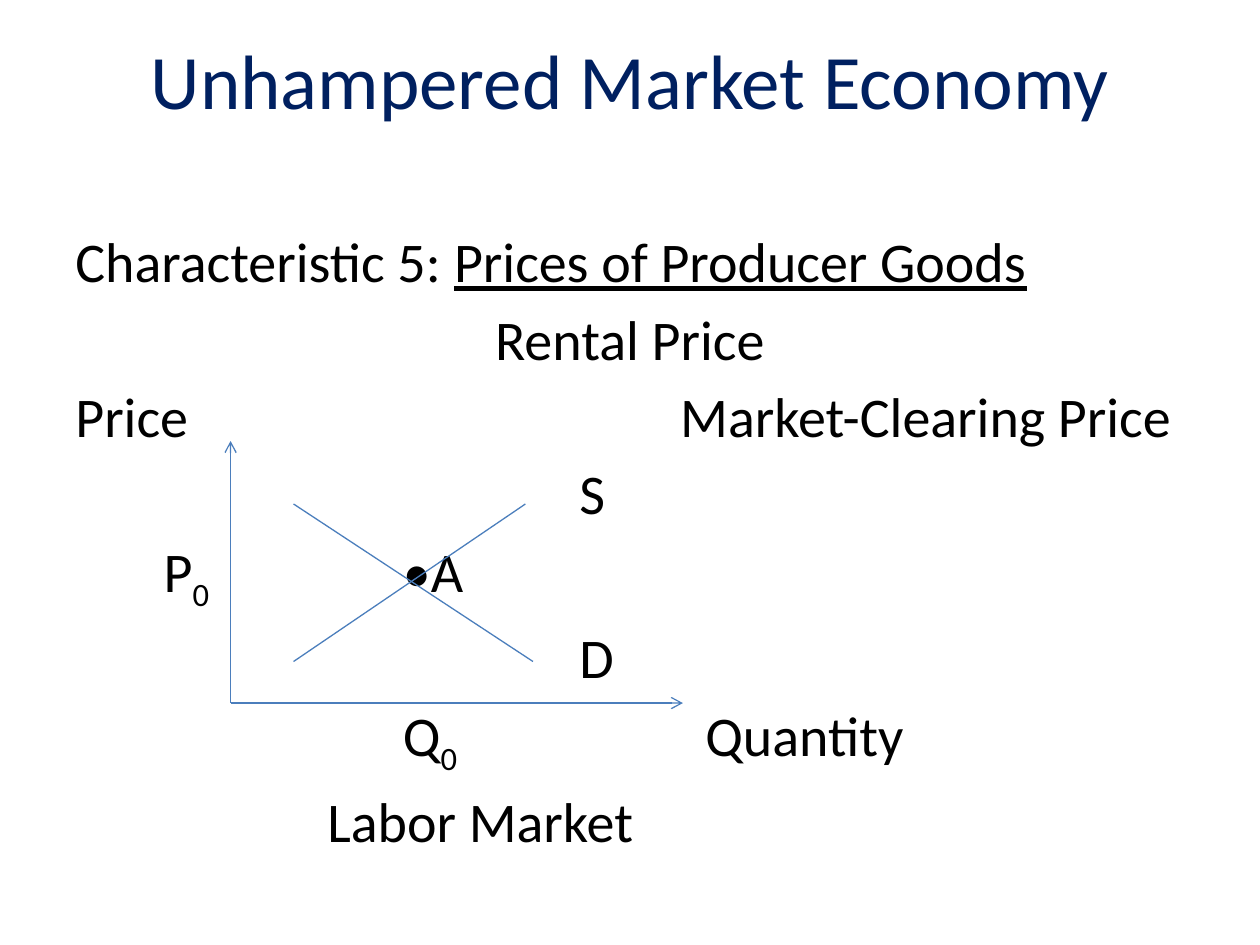
from pptx import Presentation
from pptx.dml.color import RGBColor
from pptx.enum.shapes import MSO_CONNECTOR
from pptx.enum.text import MSO_ANCHOR, PP_ALIGN
from pptx.oxml.ns import qn
from pptx.util import Inches, Pt
from lxml.etree import SubElement

NAVY = RGBColor(0x00, 0x20, 0x60)
BLACK = RGBColor(0x00, 0x00, 0x00)
BLUE = RGBColor(0x4B, 0x7E, 0xBC)
FONT = "Calibri"

TITLE = "Unhampered Market Economy"

# Each row: alignment, tab stops in inches, runs of (text, style)
ROWS = [
    (PP_ALIGN.LEFT, [], [("Characteristic 5: ", ""), ("Prices of Producer Goods", "underline")]),
    (PP_ALIGN.CENTER, [], [("Rental Price", "")]),
    (PP_ALIGN.LEFT, [4.8], [("Price\tMarket-Clearing Price", "")]),
    (PP_ALIGN.LEFT, [4], [("\tS", "")]),
    (PP_ALIGN.LEFT, [0.7, 2.6], [("\tP", ""), ("0", "sub"), ("\t•A", "")]),
    (PP_ALIGN.LEFT, [4], [("\tD", "")]),
    (PP_ALIGN.LEFT, [2.6, 5], [("\tQ", ""), ("0", "sub"), ("\tQuantity", "")]),
    (PP_ALIGN.LEFT, [2], [("\tLabor Market", "")]),
]

ORIGIN = (1.83, 5.58)
# Each line: start, end, has arrowhead
LINES = [
    (ORIGIN, (5.42, ORIGIN[1]), True),      # quantity axis
    (ORIGIN, (ORIGIN[0], 3.5), True),       # price axis
    ((2.33, 4), (4.23, 5.25), False),       # demand
    ((2.33, 5.25), (4.17, 4), False),       # supply
]


def add_run(p, text, size, color, style=""):
    r = p.add_run()
    r.text = text
    r.font.name = FONT
    r.font.size = Pt(size)
    r.font.color.rgb = color
    if style == "underline":
        r.font.underline = True
    elif style == "sub":
        r.font._element.set("baseline", "-25000")


def set_tabs(p, stops):
    tabs = SubElement(p._p.get_or_add_pPr(), qn("a:tabLst"))
    for stop in stops:
        SubElement(tabs, qn("a:tab"), pos=str(Inches(stop)), algn="l")


def add_line(s, start, end, arrow):
    x1, y1, x2, y2 = map(Inches, start + end)
    line = s.shapes.add_connector(MSO_CONNECTOR.STRAIGHT, x1, y1, x2, y2)
    line.line.color.rgb = BLUE
    line.line.width = Pt(0.75)
    if arrow:
        SubElement(line.line._get_or_add_ln(), qn("a:tailEnd"), type="arrow")
    SubElement(line._element.spPr, qn("a:effectLst"))


prs = Presentation()
prs.slide_width, prs.slide_height = Inches(10), Inches(7.5)
s = prs.slides.add_slide(prs.slide_layouts[5])

title = s.shapes.title
title.left, title.top = Inches(0), Inches(0)
title.width, title.height = Inches(10), Inches(1.25)
tf = title.text_frame
tf.vertical_anchor = MSO_ANCHOR.MIDDLE
tf.paragraphs[0].alignment = PP_ALIGN.CENTER
add_run(tf.paragraphs[0], TITLE, 44, NAVY)

body = s.shapes.add_textbox(Inches(0.5), Inches(1.75), Inches(9), Inches(5.75))
tf = body.text_frame
tf.word_wrap = True
for i, (align, stops, runs) in enumerate(ROWS):
    p = tf.add_paragraph() if i else tf.paragraphs[0]
    p.alignment = align
    p.space_before = Pt(5.8)
    if stops:
        set_tabs(p, stops)
    for text, style in runs:
        add_run(p, text, 32, BLACK, style)

for start, end, arrow in LINES:
    add_line(s, start, end, arrow)

prs.save("out.pptx")
